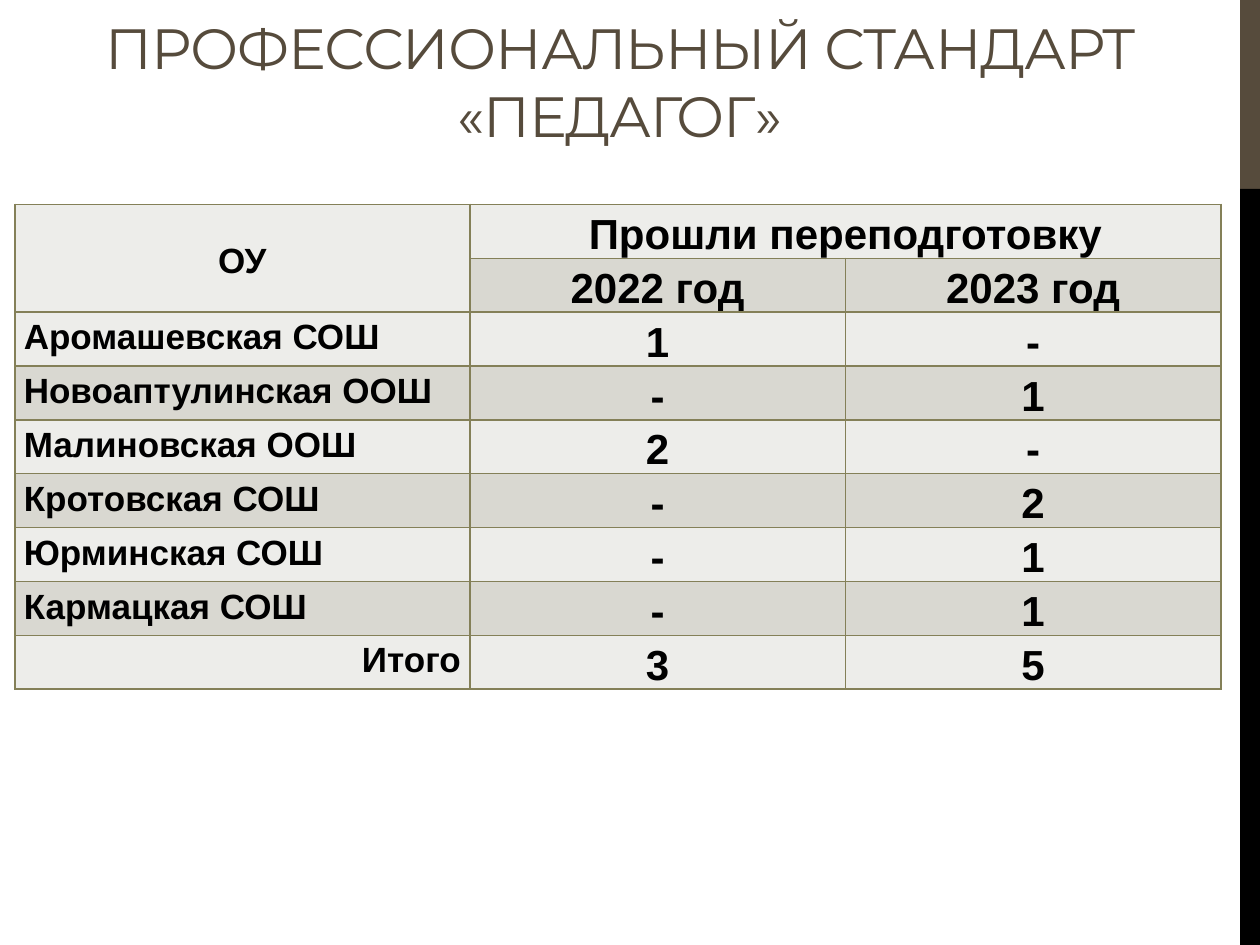
from lxml.etree import SubElement
from pptx import Presentation
from pptx.dml.color import RGBColor
from pptx.enum.shapes import MSO_SHAPE
from pptx.enum.text import MSO_ANCHOR, MSO_AUTO_SIZE, PP_ALIGN
from pptx.oxml.ns import qn
from pptx.util import Cm, Pt

COLORS = {
    "brown": "564B3C",
    "black": "000000",
    "border": "848058",
    "light": "EDEDEA",
    "dark": "D9D8D1",
}

TABLE_ROWS = [
    ["ОУ", "Прошли переподготовку", ""],
    ["", "2022 год", "2023 год"],
    ["Аромашевская СОШ", "1", "-"],
    ["Новоаптулинская ООШ", "-", "1"],
    ["Малиновская ООШ", "2", "-"],
    ["Кротовская СОШ", "-", "2"],
    ["Юрминская СОШ", "-", "1"],
    ["Кармацкая СОШ", "-", "1"],
    ["Итого", "3", "5"],
]
HEADER_ROWS = 2


def color(name):
    return RGBColor.from_string(COLORS[name])


def apply_format(target, values):
    for name, value in values.items():
        setattr(target, name, value)


def add_side_band(slide, left, top, width, height):
    """Vertical band: one fifth brown, the rest black."""
    brown_height = height / 5
    parts = [("brown", top, brown_height), ("black", top + brown_height, height - brown_height)]
    for name, part_top, part_height in parts:
        shape = slide.shapes.add_shape(
            MSO_SHAPE.RECTANGLE, Cm(left), Cm(part_top), Cm(width), Cm(part_height))
        shape.shadow.inherit = False
        shape.fill.solid()
        shape.fill.fore_color.rgb = color(name)
        shape.line.fill.background()


def place_title(slide, left, top, width, height):
    title = slide.shapes.title
    apply_format(title, {"left": Cm(left), "top": Cm(top), "width": Cm(width), "height": Cm(height)})
    frame = title.text_frame
    apply_format(frame, {"word_wrap": True, "auto_size": MSO_AUTO_SIZE.NONE,
                         "vertical_anchor": MSO_ANCHOR.MIDDLE})
    paragraph = frame.paragraphs[0]
    paragraph.alignment = PP_ALIGN.CENTER
    run = paragraph.add_run()
    run.text = "ПРОФЕССИОНАЛЬНЫЙ СТАНДАРТ «ПЕДАГОГ»"
    apply_format(run.font, {"name": "Montserrat", "size": Pt(32.4)})
    run.font.color.rgb = color("brown")
    run.font._element.set("spc", "-60")


def add_cell_borders(cell):
    properties = cell._tc.get_or_add_tcPr()
    for index, side in enumerate(("lnL", "lnR", "lnT", "lnB")):
        line = SubElement(properties, qn(f"a:{side}"), w=str(Pt(1)))
        fill = SubElement(line, qn("a:solidFill"))
        SubElement(fill, qn("a:srgbClr"), val=COLORS["border"])
        properties.insert(index, line)


def format_cell(cell, text, row, column):
    is_name = column == 0 and row >= HEADER_ROWS
    is_total = row == len(TABLE_ROWS) - 1
    alignment = PP_ALIGN.CENTER
    if is_name:
        alignment = PP_ALIGN.RIGHT if is_total else PP_ALIGN.LEFT

    apply_format(cell, {
        "margin_left": Cm(0.18), "margin_right": Cm(0.18), "margin_top": 0, "margin_bottom": 0,
        "vertical_anchor": MSO_ANCHOR.TOP if is_name else MSO_ANCHOR.MIDDLE,
    })
    cell.fill.solid()
    cell.fill.fore_color.rgb = color("dark" if row % 2 else "light")
    add_cell_borders(cell)
    if not text:
        return
    paragraph = cell.text_frame.paragraphs[0]
    apply_format(paragraph, {"alignment": alignment, "line_spacing": 1.15})
    run = paragraph.add_run()
    run.text = text
    apply_format(run.font, {"name": "Arial", "bold": True, "size": Pt(24 if column else 20)})
    run.font.color.rgb = color("black")


def add_training_table(slide, left, top, width, height):
    name_width = 9.17
    value_width = (width - name_width) / 2
    table = slide.shapes.add_table(
        len(TABLE_ROWS), 3, Cm(left), Cm(top), Cm(width), Cm(height)).table
    apply_format(table, {"first_row": False, "horz_banding": False})
    for column, column_width in zip(table.columns, (name_width, value_width, value_width)):
        column.width = Cm(column_width)
    for row_index, texts in enumerate(TABLE_ROWS):
        table.rows[row_index].height = Cm(0.99 if row_index < HEADER_ROWS else 0.94)
        for column_index, text in enumerate(texts):
            format_cell(table.cell(row_index, column_index), text, row_index, column_index)
    # Header spans
    table.cell(0, 0).merge(table.cell(1, 0))
    table.cell(0, 1).merge(table.cell(0, 2))


def main():
    presentation = Presentation()
    apply_format(presentation, {"slide_width": Cm(25.4), "slide_height": Cm(19.05)})
    slide = presentation.slides.add_slide(presentation.slide_layouts[5])

    add_side_band(slide, 25, 0, 0.4, 19.05)
    place_title(slide, 0.1, 0.13, 24.8, 3)
    add_training_table(slide, 0.3, 4.12, 24.31, 8.56)

    presentation.save("out.pptx")


if __name__ == "__main__":
    main()
